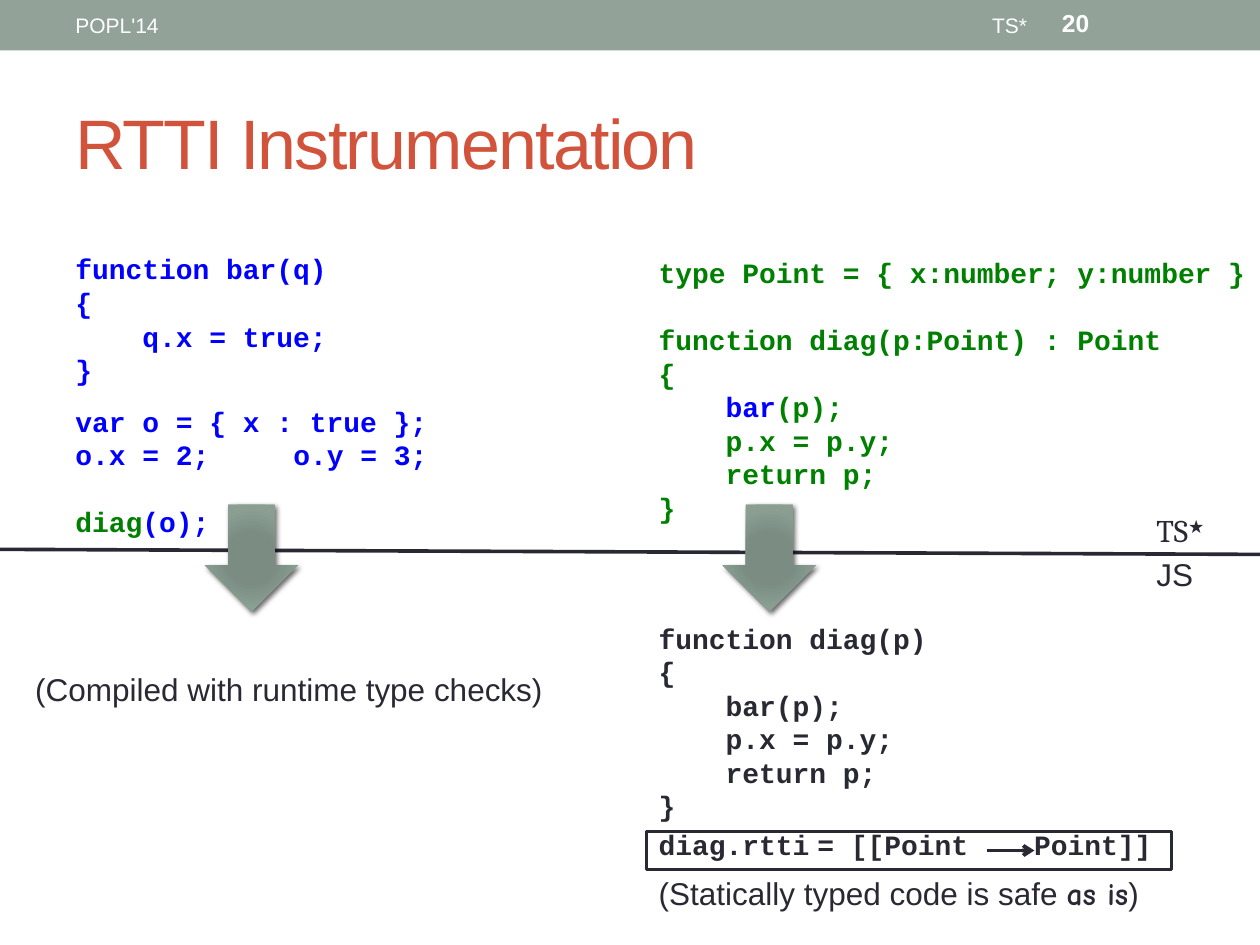
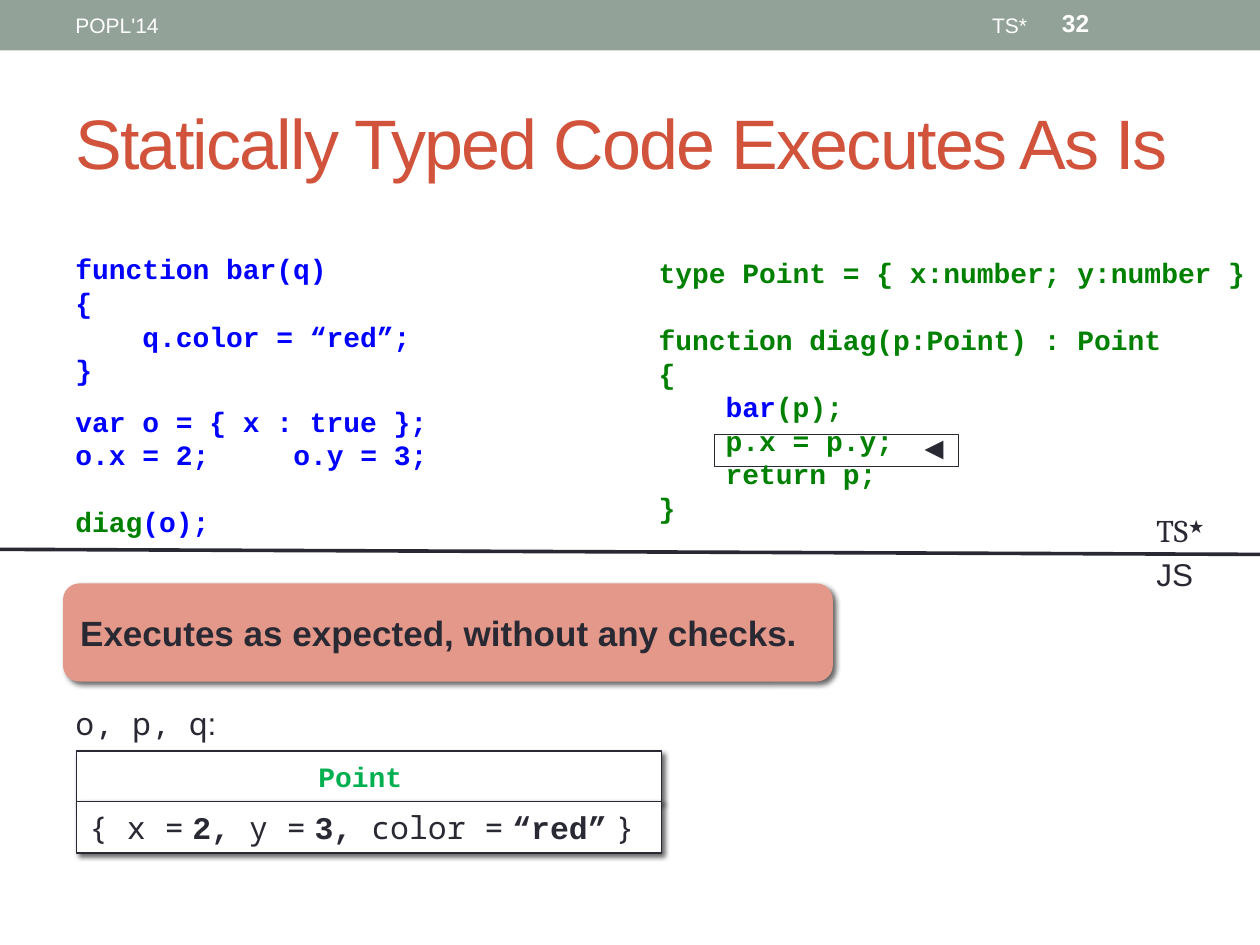
from lxml.etree import SubElement
from pptx import Presentation
from pptx.dml.color import RGBColor
from pptx.enum.shapes import MSO_CONNECTOR, MSO_SHAPE
from pptx.enum.text import MSO_ANCHOR, PP_ALIGN
from pptx.oxml import parse_xml
from pptx.oxml.ns import nsdecls, qn
from pptx.util import Inches, Pt

COLORS = {
    "band": "93A299", "title": "D2533C", "ink": "292934", "white": "FFFFFF",
    "untyped": "0000FF", "typed": "008000", "tag": "00B050", "callout": "E4988A",
    "shadow": "000000",
}
ARROW_STOPS = [(0, "7B8E82"), (34, "7B8D83"), (70, "8A9E92"), (100, "93A299")]
SANS, SERIF, CODE, MONO, HAND = "Arial", "Cambria", "Courier New", "Noto Sans Mono", "Comic Neue"
CODE_SIZE = 16
CODE_LINE = 19

LEFT_CODE, RIGHT_CODE = 0.5, 5.13
DIVIDER_TOP = 4.36


def rgb(name):
    return RGBColor.from_string(COLORS[name])


def add_run(paragraph, text, size=18, font=SANS, color="ink", bold=False, **attributes):
    """Add a run; extra attributes (spc, baseline) go to its properties."""
    run = paragraph.add_run()
    run.text = text
    run.font.size = Pt(size)
    run.font.name = font
    run.font.bold = bold
    run.font.color.rgb = rgb(color)
    for key, value in attributes.items():
        run.font._element.set(key, str(value))


def fill_frame(frame, runs, anchor, align):
    """Write one paragraph of (text, style) runs."""
    frame.word_wrap = True
    frame.vertical_anchor = anchor
    frame.paragraphs[0].alignment = align
    for text, style in runs:
        add_run(frame.paragraphs[0], text, **style)


def add_label(slide, box, runs, anchor=MSO_ANCHOR.TOP, align=PP_ALIGN.LEFT):
    label = slide.shapes.add_textbox(*map(Inches, box))
    fill_frame(label.text_frame, runs, anchor, align)


def add_code(slide, box, lines, color, tab=None):
    """Add code lines, each a string or (text, style) runs; "" leaves a one-line gap."""
    frame = slide.shapes.add_textbox(*map(Inches, box)).text_frame
    frame.word_wrap = True
    paragraph, gap = frame.paragraphs[0], 0
    for index, line in enumerate(lines):
        if not line:
            gap = CODE_LINE
            continue
        if index:
            paragraph = frame.add_paragraph()
            paragraph.space_before = Pt(gap)
        gap = 0
        runs = [(line, {})] if isinstance(line, str) else line
        if tab and any("\t" in text for text, _ in runs):
            stops = SubElement(paragraph._p.get_or_add_pPr(), qn("a:tabLst"))
            SubElement(stops, qn("a:tab"), pos=str(Inches(tab)), algn="l")
        for text, style in runs:
            add_run(paragraph, text, **{"size": CODE_SIZE, "font": CODE, "color": color,
                                        "bold": True, **style})


def add_block(slide, kind, box, fill=None, line_width=None, shadow=False):
    block = slide.shapes.add_shape(kind, *map(Inches, box))
    block.shadow.inherit = False
    if fill:
        block.fill.solid()
        block.fill.fore_color.rgb = rgb(fill)
    else:
        block.fill.background()
    if line_width:
        block.line.width = Pt(line_width)
        block.line.color.rgb = rgb("ink")
    else:
        block.line.fill.background()
    if shadow:
        effects = block._element.spPr.find(qn("a:effectLst"))
        effects.append(parse_xml(
            f'<a:outerShdw {nsdecls("a")} blurRad="{Pt(3)}" dist="{Pt(2)}" dir="2700000" '
            f'rotWithShape="0"><a:srgbClr val="{COLORS["shadow"]}">'
            '<a:alpha val="60000"/></a:srgbClr></a:outerShdw>'))
    return block


def fill_block(block, runs, align=PP_ALIGN.LEFT):
    fill_frame(block.text_frame, runs, MSO_ANCHOR.MIDDLE, align)


def add_rule(slide, start, end, arrow=False):
    rule = slide.shapes.add_connector(MSO_CONNECTOR.STRAIGHT, *map(Inches, start + end))
    rule.line.width = Pt(2.08)
    rule.line.color.rgb = rgb("ink")
    if arrow:
        SubElement(rule.line._get_or_add_ln(), qn("a:tailEnd"), type="arrow")
    SubElement(rule._element.spPr, qn("a:effectLst"))


def add_compile_arrow(slide, left, top):
    arrow = add_block(slide, MSO_SHAPE.RIGHT_ARROW, (left, top, 0.85, 0.74), shadow=True)
    arrow.rotation = 90
    stops = "".join(f'<a:gs pos="{place * 1000}"><a:srgbClr val="{color}"/></a:gs>'
                    for place, color in ARROW_STOPS)
    properties = arrow._element.spPr
    properties.replace(properties.find(qn("a:noFill")), parse_xml(
        f'<a:gradFill {nsdecls("a")} rotWithShape="1"><a:gsLst>{stops}</a:gsLst>'
        '<a:path path="circle"><a:fillToRect l="100000" t="100000" r="100000" b="100000"/>'
        '</a:path></a:gradFill>'))


def add_header(slide, title, number):
    add_block(slide, MSO_SHAPE.RECTANGLE, (0, 0, 10, 0.4), "band")
    small = {"size": 12, "color": "white"}
    middle = MSO_ANCHOR.MIDDLE
    add_label(slide, (0.5, 0.02, 3.17, 0.36), [("POPL'14", small)], middle)
    add_label(slide, (3.75, 0.02, 4.5, 0.36), [("TS*", small)], middle, PP_ALIGN.RIGHT)
    add_label(slide, (8.33, 0, 1.17, 0.36),
              [(str(number), {"size": 14, "color": "white", "bold": True})], middle)
    add_label(slide, (0.5, 0.58, 9, 1.08),
              [(title, {"size": 40, "color": "title", "spc": -100})], middle)


def add_source_code(slide, bar_body):
    """Place the untyped code on the left and the typed code on the right."""
    add_code(slide, (LEFT_CODE, 1.95, 4.14, 1.18),
             ["function bar(q)", "{", "    " + bar_body, "}"], "untyped")
    add_code(slide, (LEFT_CODE, 3.16, 4.14, 1.18),
             ["var o = { x : true };", "o.x = 2;\to.y = 3;", "",
              [("diag", {"color": "typed"}), ("(o);", {})]], "untyped", tab=1.73)
    add_code(slide, (RIGHT_CODE, 1.98, 4.87, 2.26),
             ["type Point = { x:number; y:number }", "",
              "function diag(p:Point) : Point", "{",
              [("    ", {}), ("bar", {"color": "untyped"}), ("(p);", {})],
              "    p.x = p.y;", "    return p;", "}"], "typed")


def add_language_divider(slide, top):
    add_rule(slide, (0, top), (10, top + 0.04))
    add_label(slide, (9.08, top - 0.35, 0.8, 0.4),
              [("TS", {"font": SERIF}), ("★", {"baseline": 30000})])
    add_label(slide, (9.08, top, 0.8, 0.4), [("JS", {})])


def add_compiled_code(slide, left, top):
    add_code(slide, (left, top, 4.87, 1.72),
             ["function diag(p)", "{", "    bar(p);", "    p.x = p.y;",
              "    return p;", "}"], "ink")
    add_code(slide, (left, top + 1.64, 4.6, 0.37),
             [[("diag.rtti", {}), (" ", {"font": SANS}), ("= [[Point\tPoint]]", {})]],
             "ink", tab=2.98)
    add_rule(slide, (left + 2.7, top + 1.87), (left + 3.08, top + 1.87), arrow=True)
    add_block(slide, MSO_SHAPE.RECTANGLE, (left, top + 1.72, 4.17, 0.3), line_width=1.75)
    add_label(slide, (left, top + 2.01, 4.87, 0.4),
              [("(Statically typed code is safe ", {}),
               ("as is", {"font": HAND, "bold": True}), (")", {})])


def add_current_line(slide, left, top):
    add_block(slide, MSO_SHAPE.RECTANGLE, (left, top, 1.94, 0.25), line_width=0.75)
    add_label(slide, (left + 1.57, top - 0.1, 0.48, 0.4), [("◄", {"font": MONO})])


def add_heap_object(slide, left, top):
    """Show the variables, and below them the type tag and fields of their object."""
    mono, bold_code = {"font": MONO}, {"font": CODE, "bold": True}
    narrow_space = (" ", {"font": SANS})
    add_label(slide, (left, top, 1.88, 0.4), [("o, p, q", mono), (":", {})])
    tag, fields = [add_block(slide, MSO_SHAPE.RECTANGLE,
                             (left + 0.11, top + 0.42 + row * 0.4, 4.64, 0.41),
                             "white", 0.75, shadow=True) for row in range(2)]
    fill_block(tag, [("Point", {**bold_code, "size": 16, "color": "tag"})], PP_ALIGN.CENTER)
    tag.text_frame.margin_right = Inches(0.24)
    field_runs = []
    for name, value in (("{ x =", "2, "), ("y =", "3, "), ("color =", "“red”")):
        field_runs += [(name, mono), narrow_space, (value, bold_code)]
    fill_block(fields, field_runs + [narrow_space, ("}", mono)])


def build_instrumentation(slide):
    add_header(slide, "RTTI Instrumentation", 20)
    add_source_code(slide, "q.x = true;")
    add_language_divider(slide, DIVIDER_TOP)
    for left in (1.57, 5.68):
        add_compile_arrow(slide, left, DIVIDER_TOP - 0.3)
    add_compiled_code(slide, RIGHT_CODE, 4.88)
    add_label(slide, (0.18, 5.27, 4.35, 0.4), [("(Compiled with runtime type checks)", {})])


def build_execution(slide):
    add_header(slide, "Statically Typed Code Executes As Is", 32)
    add_current_line(slide, 5.67, 3.45)
    add_source_code(slide, "q.color = “red”;")
    add_language_divider(slide, DIVIDER_TOP)
    add_heap_object(slide, LEFT_CODE, 5.54)
    callout = add_block(slide, MSO_SHAPE.ROUNDED_RECTANGLE, (LEFT_CODE, 4.63, 6.11, 0.78),
                        "callout", shadow=True)
    fill_block(callout, [("Executes as expected, without any checks.",
                          {"size": 20, "bold": True})])


def main():
    deck = Presentation()
    deck.slide_width, deck.slide_height = Inches(10), Inches(7.5)
    for build in (build_instrumentation, build_execution):
        build(deck.slides.add_slide(deck.slide_layouts[6]))
    deck.save("out.pptx")


if __name__ == "__main__":
    main()
